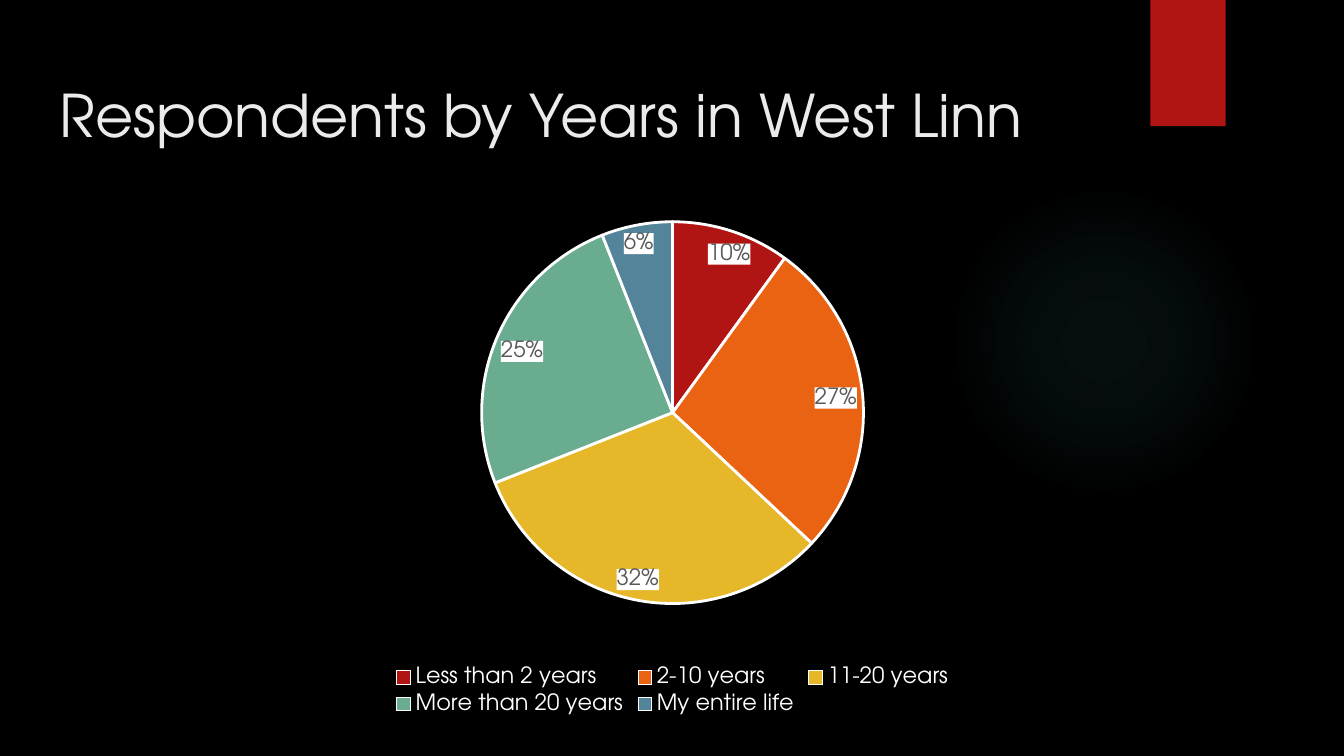
from dataclasses import dataclass

import lxml.etree
import pptx
import pptx.chart.data
import pptx.dml.color
import pptx.enum.chart
import pptx.enum.shapes
import pptx.enum.text
import pptx.oxml
import pptx.oxml.ns
import pptx.util

# Widescreen, 16 to 9
SLIDE_WIDTH = pptx.util.Inches(10)
SLIDE_HEIGHT = SLIDE_WIDTH * 9 // 16


@dataclass(frozen=True)
class Theme:
    font: str = "TeX Gyre Adventor"
    background: str = "000000"
    accent: str = "B01513"
    glow: str = "50B9C1"
    title: str = "EBEBEB"
    light: str = "FFFFFF"
    label: str = "595959"
    slices: tuple = ("B01513", "EA6312", "E6B729", "6AAC90", "54849A")
    title_size: float = 31.5
    chart_size: float = 10
    legend_size: float = 12


THEME = Theme()
RESPONDENTS = {
    "Less than 2 years": 10,
    "2-10 years": 27,
    "11-20 years": 32,
    "More than 20 years": 25,
    "My entire life": 6,
}


def share_box(left, top, width, height):
    """Turn percentages of the slide into a box of lengths."""
    sizes = (SLIDE_WIDTH, SLIDE_HEIGHT) * 2
    return [round(size * share / 100)
            for size, share in zip(sizes, (left, top, width, height))]


def set_fill(fill, color):
    fill.solid()
    fill.fore_color.rgb = pptx.dml.color.RGBColor.from_string(color)


def set_font(font, size, color):
    font.name = THEME.font
    font.size = pptx.util.Pt(size)
    font.color.rgb = pptx.dml.color.RGBColor.from_string(color)


def drawing_xml(content):
    """Parse one DrawingML element, written with the a: prefix."""
    tag, rest = content.split(">", 1)
    return pptx.oxml.parse_xml(f"{tag} {pptx.oxml.ns.nsdecls('a')}>{rest}")


def add_plain_shape(slide, kind, box):
    shape = slide.shapes.add_shape(kind, *box)
    shape.shadow.inherit = False
    shape.line.fill.background()
    return shape


def add_glow(slide, box):
    shape = add_plain_shape(slide, pptx.enum.shapes.MSO_SHAPE.OVAL, box)
    # Radial gradient that fades to transparent
    stops = "".join(
        f'<a:gs pos="{position * 1000}"><a:srgbClr val="{THEME.glow}">'
        f'<a:alpha val="{alpha * 1000}"/></a:srgbClr></a:gs>'
        for position, alpha in ((0, 7), (36, 6), (69, 0)))
    gradient = drawing_xml(
        f'<a:gradFill><a:gsLst>{stops}</a:gsLst><a:path path="circle">'
        '<a:fillToRect l="50000" t="50000" r="50000" b="50000"/>'
        '</a:path></a:gradFill>')
    geometry = shape.element.spPr.find(pptx.oxml.ns.qn("a:prstGeom"))
    geometry.addnext(gradient)


def add_ribbon(slide, box):
    shape = add_plain_shape(slide, pptx.enum.shapes.MSO_SHAPE.RECTANGLE, box)
    set_fill(shape.fill, THEME.accent)
    # Soft shadow below the ribbon
    effects = shape.element.spPr.find(pptx.oxml.ns.qn("a:effectLst"))
    effects.append(drawing_xml(
        f'<a:outerShdw blurRad="{pptx.util.Pt(3)}" dist="{pptx.util.Pt(2)}"'
        ' dir="5400000"><a:srgbClr val="000000"><a:alpha val="45000"/>'
        '</a:srgbClr></a:outerShdw>'))


def add_title(slide, box, text):
    frame = slide.shapes.add_textbox(*box).text_frame
    frame.word_wrap = True
    frame.vertical_anchor = pptx.enum.text.MSO_ANCHOR.TOP
    inset = pptx.util.Inches(0.1)
    frame.margin_left = frame.margin_right = inset
    frame.margin_top = frame.margin_bottom = inset
    run = frame.paragraphs[0].add_run()
    run.text = text
    set_font(run.font, THEME.title_size, THEME.title)


def set_plot_layout(chart, left, top, width, height):
    """Fix the inner plot area, in shares of the chart."""
    plot_area = chart.element.chart.plotArea
    for old in plot_area.findall(pptx.oxml.ns.qn("c:layout")):
        plot_area.remove(old)
    layout = lxml.etree.Element(pptx.oxml.ns.qn("c:layout"))
    manual = lxml.etree.SubElement(layout, pptx.oxml.ns.qn("c:manualLayout"))
    settings = {"layoutTarget": "inner", "xMode": "edge", "yMode": "edge",
                "x": left, "y": top, "w": width, "h": height}
    for name, value in settings.items():
        element = lxml.etree.SubElement(manual, pptx.oxml.ns.qn(f"c:{name}"))
        element.set("val", str(value))
    plot_area.insert(0, layout)


def add_pie(slide, box, values):
    data = pptx.chart.data.CategoryChartData()
    data.categories = list(values)
    data.add_series("Series 1", list(values.values()))
    chart = slide.shapes.add_chart(
        pptx.enum.chart.XL_CHART_TYPE.PIE, *box, data).chart
    chart.has_title = False
    set_font(chart.font, THEME.chart_size, THEME.light)
    set_plot_layout(chart, 0.31, 0.27, 0.38, 0.56)

    # Slices
    plot = chart.plots[0]
    plot.vary_by_categories = True
    series = plot.series[0]
    for index, color in enumerate(THEME.slices):
        slice_format = series.points[index].format
        set_fill(slice_format.fill, color)
        set_fill(slice_format.line.fill, THEME.light)
        slice_format.line.width = pptx.util.Pt(1.5)

    # Percent labels on white
    labels = series.data_labels
    labels.show_percentage = True
    labels.show_value = False
    labels.number_format = "0%"
    labels.number_format_is_linked = False
    labels.position = pptx.enum.chart.XL_LABEL_POSITION.BEST_FIT
    set_font(labels.font, THEME.legend_size, THEME.label)
    background = pptx.oxml.parse_xml(
        f'<c:spPr {pptx.oxml.ns.nsdecls("c", "a")}><a:solidFill>'
        f'<a:srgbClr val="{THEME.light}"/></a:solidFill></c:spPr>')
    label_element = series.format._element.find(pptx.oxml.ns.qn("c:dLbls"))
    label_element.find(pptx.oxml.ns.qn("c:txPr")).addprevious(background)

    # Legend
    chart.has_legend = True
    chart.legend.position = pptx.enum.chart.XL_LEGEND_POSITION.BOTTOM
    chart.legend.include_in_layout = False
    set_font(chart.legend.font, THEME.legend_size, THEME.light)


def main():
    presentation = pptx.Presentation()
    presentation.slide_width = SLIDE_WIDTH
    presentation.slide_height = SLIDE_HEIGHT
    slide = presentation.slides.add_slide(presentation.slide_layouts[6])
    set_fill(slide.background.fill, THEME.background)

    add_glow(slide, share_box(70.6, 24.6, 23.1, 41.1))
    add_ribbon(slide, share_box(85.6, 0, 5.6, 16.7))
    add_title(slide, share_box(3.45, 8.7, 93.2, 11.2),
              "Respondents by Years in West Linn")
    add_pie(slide, share_box(9.8, 5, 80.5, 90.2), RESPONDENTS)
    presentation.save("out.pptx")


if __name__ == "__main__":
    main()
